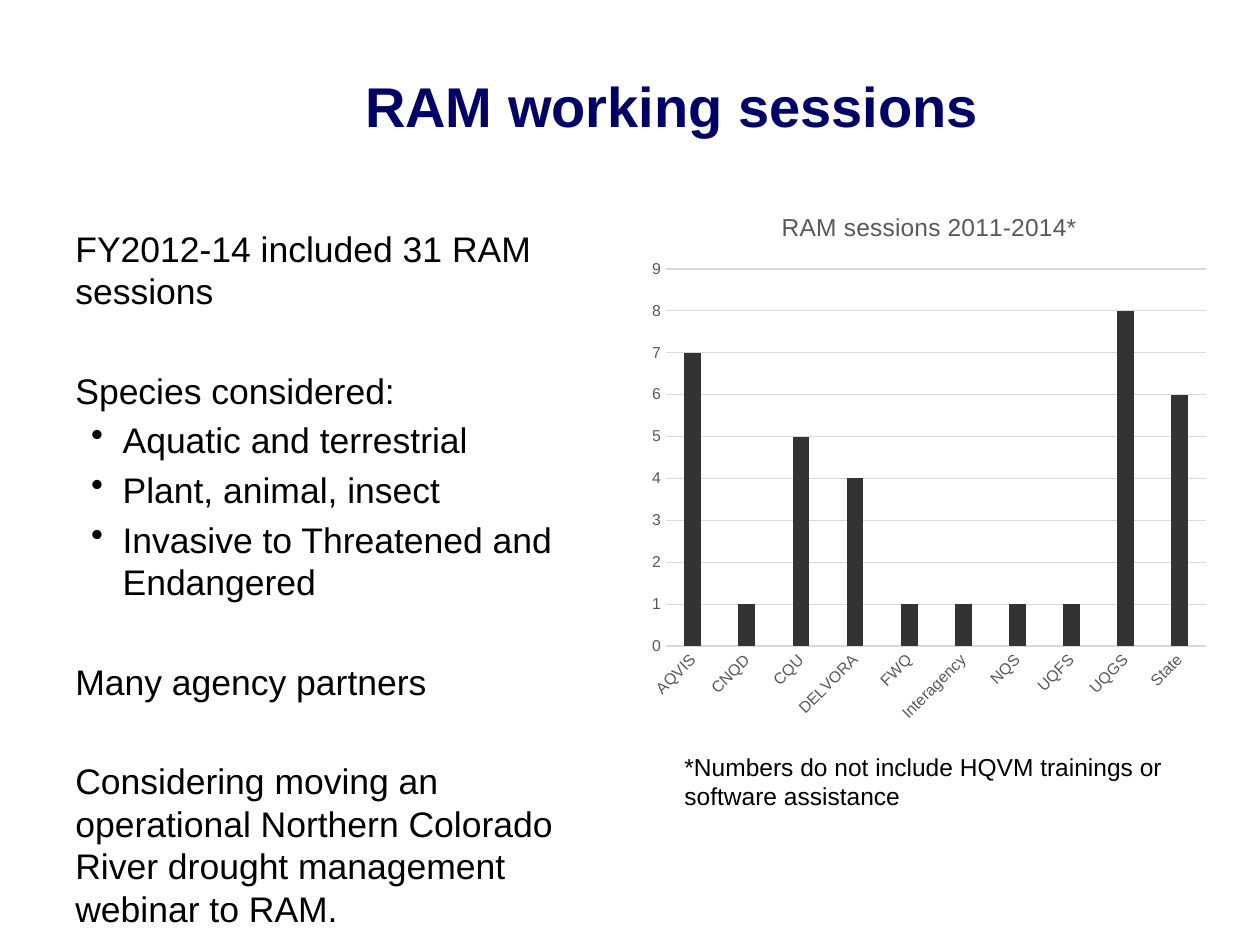
"""Build the RAM working sessions slide with its notes and column chart."""
from pptx import Presentation
from pptx import util as u
from pptx.chart.data import CategoryChartData
from pptx.dml.color import RGBColor
from pptx.enum import chart as c
from pptx.enum import text as t
from pptx.oxml import ns, xmlchemy

NAVY = RGBColor(0x00, 0x00, 0x66)
BLACK = RGBColor(0x00, 0x00, 0x00)
GREY = RGBColor(0x59, 0x59, 0x59)
PALE = RGBColor(0xD9, 0xD9, 0xD9)
CHARCOAL = RGBColor(0x33, 0x33, 0x33)
FONT = "Arial"
BODY_SIZE = 20.3
SESSIONS = {
    "AQVIS": 7, "CNQD": 1, "CQU": 5, "DELVORA": 4, "FWQ": 1,
    "Interagency": 1, "NQS": 1, "UQFS": 1, "UQGS": 8, "State": 6,
}
SECTIONS = [
    ("FY2012-14 included 31 RAM sessions", []),
    ("Species considered:", [
        "Aquatic and terrestrial",
        "Plant, animal, insect",
        "Invasive to Threatened and Endangered",
    ]),
    ("Many agency partners", []),
    ("Considering moving an operational Northern Colorado River drought "
     "management webinar to RAM.", []),
]


def style_font(font, size, color, bold=False):
    font.name, font.size, font.bold = FONT, u.Pt(size), bold
    font.color.rgb = color


def write(paragraph, content, size=BODY_SIZE, color=BLACK, bold=False,
          align=t.PP_ALIGN.LEFT, before=0, bullet=False):
    run = paragraph.add_run()
    run.text = content
    style_font(run.font, size, color, bold)
    paragraph.alignment = align
    paragraph.space_before = u.Pt(before)
    if bullet:
        properties = paragraph._p.get_or_add_pPr()
        properties.set("marL", str(u.Pt(27)))
        properties.set("indent", str(u.Pt(-18)))
        mark = xmlchemy.OxmlElement("a:buChar")
        mark.set("char", "•")
        properties.append(mark)


def add_text_frame(slide, left, top, width, height, anchor=t.MSO_ANCHOR.TOP):
    box = slide.shapes.add_textbox(
        u.Pt(left), u.Pt(top), u.Pt(width), u.Pt(height))
    frame = box.text_frame
    frame.word_wrap = True
    frame.vertical_anchor = anchor
    return frame


def add_sections(slide):
    frame = add_text_frame(slide, 36, 126, 318, 354)
    for index, (heading, points) in enumerate(SECTIONS):
        paragraph = frame.add_paragraph() if index else frame.paragraphs[0]
        write(paragraph, heading, before=32.5 if index else 0)
        for point in points:
            write(frame.add_paragraph(), point, before=4, bullet=True)


def style_axis(axis):
    axis.major_tick_mark = axis.minor_tick_mark = c.XL_TICK_MARK.NONE
    style_font(axis.tick_labels.font, 9, GREY)


def style_line(line):
    line.color.rgb = PALE
    line.width = u.Pt(0.75)


def add_session_chart(slide):
    data = CategoryChartData()
    data.categories = list(SESSIONS)
    data.add_series("Series 1", list(SESSIONS.values()))
    chart = slide.shapes.add_chart(
        c.XL_CHART_TYPE.COLUMN_CLUSTERED,
        u.Pt(366), u.Pt(108), u.Pt(330), u.Pt(311), data).chart
    style_font(chart.font, 10, BLACK)
    chart.has_legend = False
    chart.has_title = True
    write(chart.chart_title.text_frame.paragraphs[0], "RAM sessions 2011-2014*",
          size=14, color=GREY, align=t.PP_ALIGN.CENTER)
    chart.chart_title.include_in_layout = False

    plot = chart.plots[0]
    plot.vary_by_categories = False
    plot.gap_width, plot.overlap = 219, -27
    fill = plot.series[0].format.fill
    fill.solid()
    fill.fore_color.rgb = CHARCOAL

    categories, values = chart.category_axis, chart.value_axis
    style_axis(categories)
    style_line(categories.format.line)
    labels = categories._element.find(ns.qn("c:txPr"))
    labels.find(ns.qn("a:bodyPr")).set("rot", "-2700000")
    style_axis(values)
    values.format.line.fill.background()
    values.minimum_scale, values.maximum_scale, values.major_unit = 0, 9, 1
    style_line(values.major_gridlines.format.line)


def main():
    presentation = Presentation()
    presentation.slide_width, presentation.slide_height = u.Pt(720), u.Pt(540)
    slide = presentation.slides.add_slide(presentation.slide_layouts[6])
    title = add_text_frame(slide, 102, 18, 564, 84, t.MSO_ANCHOR.MIDDLE)
    write(title.paragraphs[0], "RAM working sessions", size=32, color=NAVY,
          bold=True, align=t.PP_ALIGN.CENTER)
    add_sections(slide)
    add_session_chart(slide)
    footnote = add_text_frame(slide, 384, 426, 312, 41)
    write(footnote.paragraphs[0],
          "*Numbers do not include HQVM trainings or software assistance", size=14)
    presentation.save("out.pptx")


if __name__ == "__main__":
    main()
